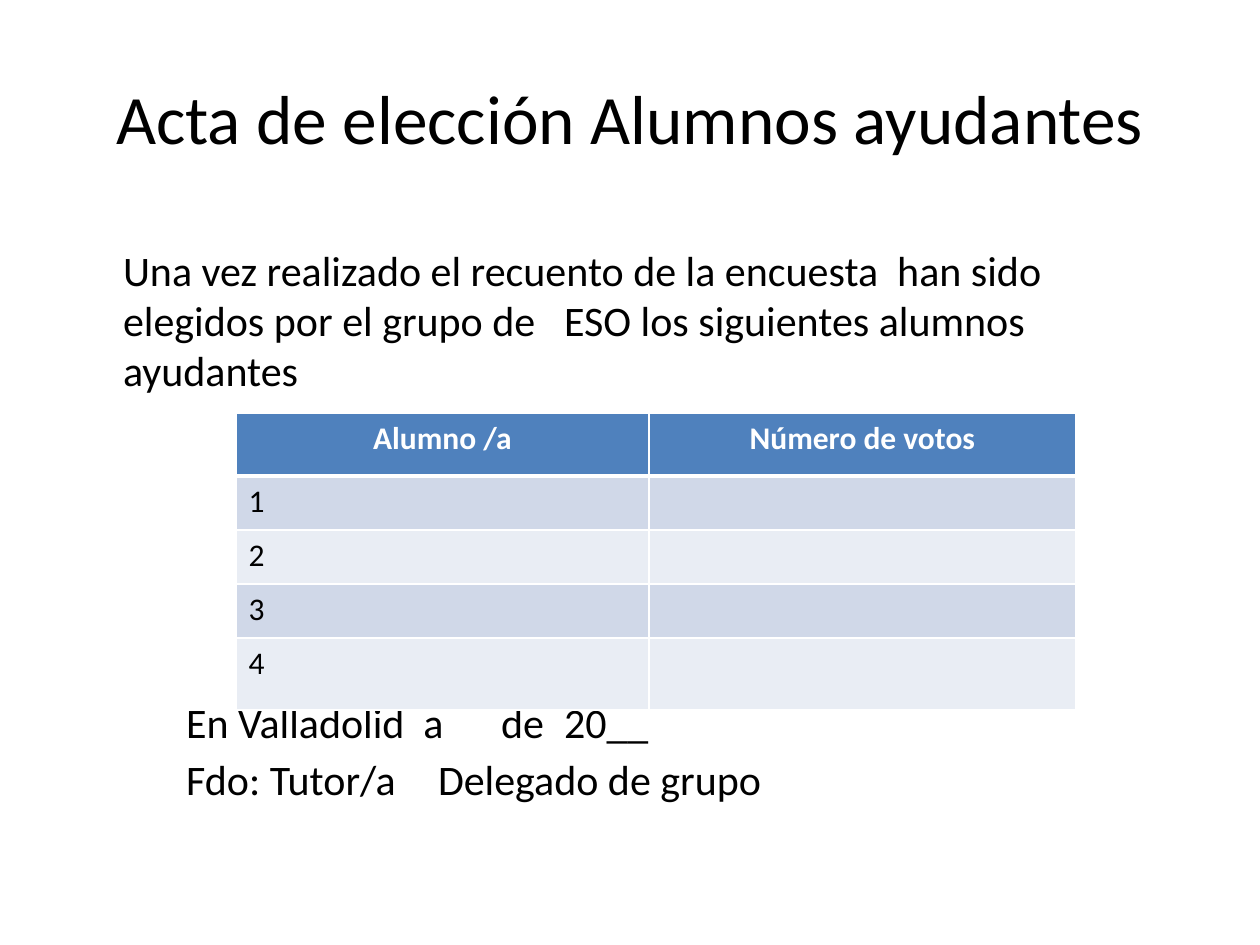
from dataclasses import dataclass

from lxml import etree
from pptx import Presentation
from pptx.dml.color import RGBColor
from pptx.enum import text
from pptx.oxml import ns
from pptx.util import Emu, Pt

PX = 914400 / 126
FONT = "Calibri"
BLACK, WHITE, BLUE = "000000", "FFFFFF", "4F81BD"
BANDS = ("D0D8E8", "E9EDF4")


@dataclass
class Line:
    words: str
    space_before: int
    tabs: tuple[int, ...]


TITLE = "Acta de elección Alumnos ayudantes"
LINES = [
    Line(
        "Una vez realizado el recuento de la encuesta  han sido elegidos "
        "por el grupo de\tESO los siguientes alumnos ayudantes",
        0,
        (498,),
    ),
    Line("\tEn Valladolid  a\tde\t20__", 301, (143, 467, 719)),
    Line("\tFdo: Tutor/a\tDelegado de grupo", 7, (86, 571)),
]
HEADINGS = ("Alumno /a", "Número de votos")
COLUMN_WIDTHS = (413, 427)
ROW_HEIGHTS = (63, 54, 54, 54, 72)


def px(length: int) -> Emu:
    return Emu(round(length * PX))


def color(value: str) -> RGBColor:
    return RGBColor.from_string(value)


def apply(target, values: dict) -> None:
    for name, value in values.items():
        setattr(target, name, value)


def place(box, left: int, top: int, width: int, height: int) -> None:
    apply(box, {"left": px(left), "top": px(top), "width": px(width), "height": px(height)})


def write(para, words: str, size: float, ink: str, bold: bool = False) -> None:
    span = para.add_run()
    span.text = words
    apply(span.font, {"name": FONT, "size": Pt(size), "bold": bold})
    span.font.color.rgb = color(ink)


def draw_title(box) -> None:
    place(box, 63, 38, 1134, 157)
    frame = box.text_frame
    apply(frame, {
        "auto_size": text.MSO_AUTO_SIZE.NONE,
        "vertical_anchor": text.MSO_ANCHOR.MIDDLE,
    })
    para = frame.paragraphs[0]
    para.alignment = text.PP_ALIGN.CENTER
    write(para, TITLE, 39.6, BLACK)


def format_tabs(para, stops: tuple[int, ...]) -> None:
    props = para._p.get_or_add_pPr()
    props.set("marL", "0")
    props.set("indent", "0")
    etree.SubElement(props, ns.qn("a:buNone"))
    tab_list = etree.SubElement(props, ns.qn("a:tabLst"))
    for stop in stops:
        etree.SubElement(tab_list, ns.qn("a:tab"), pos=str(px(stop)), algn="l")


def draw_body(box) -> None:
    place(box, 63, 220, 1134, 624)
    frame = box.text_frame
    apply(frame, {
        "auto_size": text.MSO_AUTO_SIZE.NONE,
        "vertical_anchor": text.MSO_ANCHOR.TOP,
        "word_wrap": True,
        "margin_left": px(60),
        "margin_right": px(25),
        "margin_top": px(24),
    })
    for index, line in enumerate(LINES):
        para = frame.add_paragraph() if index else frame.paragraphs[0]
        para.space_before = px(line.space_before)
        format_tabs(para, line.tabs)
        write(para, line.words, 24, BLACK)


def draw_borders(cell, widths: dict[str, int]) -> None:
    props = cell._tc.get_or_add_tcPr()
    for index, (side, width) in enumerate(widths.items()):
        border = etree.Element(ns.qn(f"a:{side}"), w=str(Pt(width)))
        fill = etree.SubElement(border, ns.qn("a:solidFill"))
        etree.SubElement(fill, ns.qn("a:srgbClr"), val=WHITE)
        props.insert(index, border)


def draw_cell(cell, row: int, column: int) -> None:
    header = row == 0
    cell.fill.solid()
    cell.fill.fore_color.rgb = color(BLUE if header else BANDS[(row - 1) % 2])
    para = cell.text_frame.paragraphs[0]
    if header:
        para.alignment = text.PP_ALIGN.CENTER
        write(para, HEADINGS[column], 18, WHITE, True)
    elif column == 0:
        write(para, str(row), 18, BLACK)
    draw_borders(cell, {
        "lnL": 1,
        "lnR": 1,
        "lnT": 3 if row == 1 else 1,
        "lnB": 3 if header else 1,
    })


def draw_votes(page) -> None:
    table = page.shapes.add_table(
        len(ROW_HEIGHTS), len(COLUMN_WIDTHS),
        px(236), px(413), px(sum(COLUMN_WIDTHS)), px(sum(ROW_HEIGHTS)),
    ).table
    for column, width in zip(table.columns, COLUMN_WIDTHS):
        column.width = px(width)
    for row, height in enumerate(ROW_HEIGHTS):
        table.rows[row].height = px(height)
        for column in range(len(COLUMN_WIDTHS)):
            draw_cell(table.cell(row, column), row, column)


def main() -> None:
    deck = Presentation()
    apply(deck, {"slide_width": px(1260), "slide_height": px(945)})
    page = deck.slides.add_slide(deck.slide_layouts[1])
    draw_title(page.shapes.title)
    draw_body(page.placeholders[1])
    draw_votes(page)
    deck.save("out.pptx")


if __name__ == "__main__":
    main()
